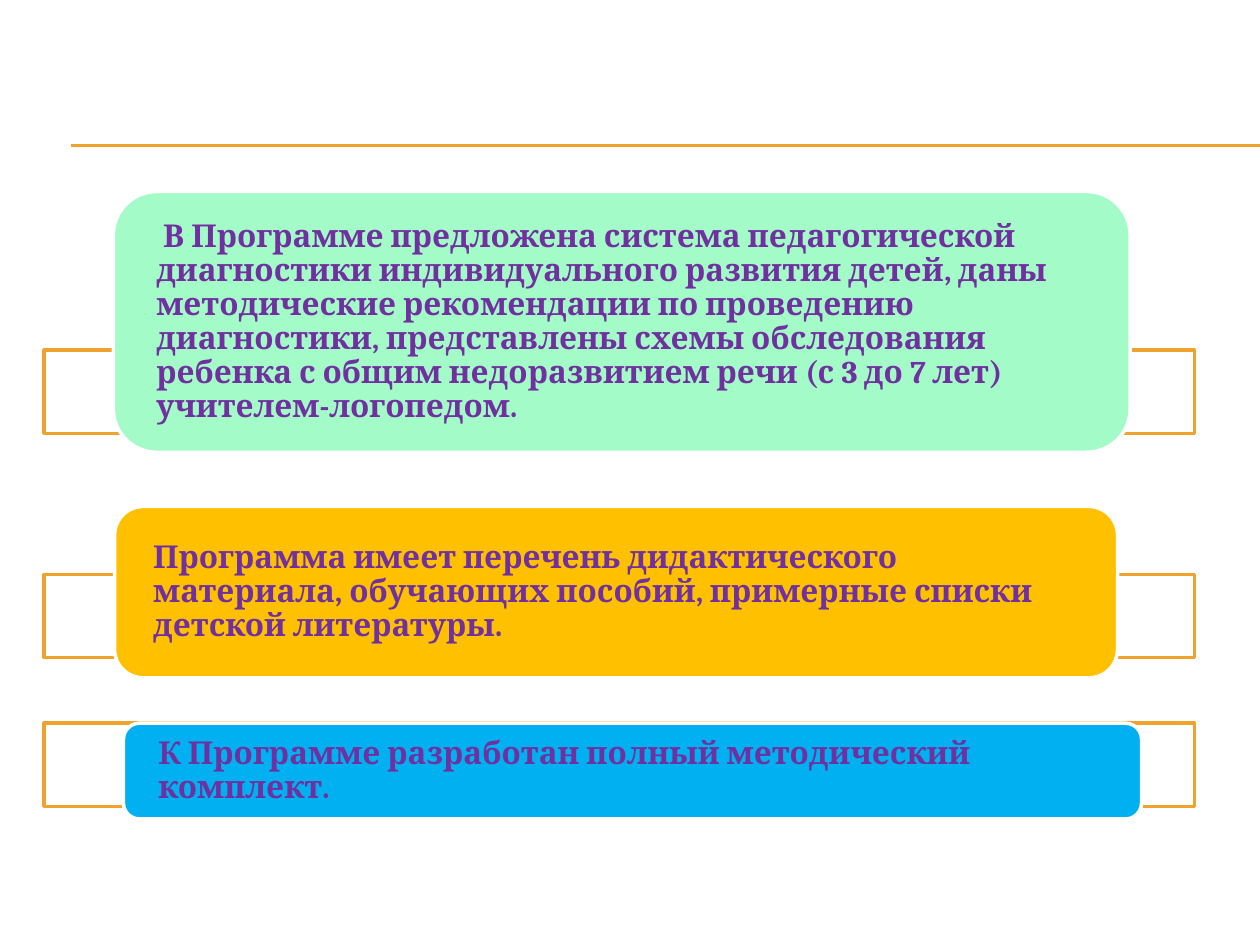
from lxml.etree import SubElement
from pptx import Presentation
from pptx.dml.color import RGBColor
from pptx.enum.shapes import MSO_CONNECTOR, MSO_SHAPE
from pptx.enum.text import MSO_ANCHOR, PP_ALIGN
from pptx.oxml.ns import qn
from pptx.util import Inches, Pt

ORANGE = RGBColor(0xF0, 0xA2, 0x2E)
WHITE = RGBColor(0xFF, 0xFF, 0xFF)
PURPLE = RGBColor(0x70, 0x30, 0xA0)
MINT = RGBColor(0xA3, 0xFB, 0xC7)
AMBER = RGBColor(0xFF, 0xC0, 0x00)
BLUE = RGBColor(0x00, 0xB0, 0xF0)

# text, fill, card box (left, top, width, height), top of the frame behind it
CARDS = [
    (" В Программе предложена система педагогической диагностики "
     "индивидуального развития детей, даны методические рекомендации по "
     "проведению диагностики, представлены схемы обследования ребенка с общим "
     "недоразвитием речи (с 3 до 7 лет) учителем-логопедом.",
     MINT, (0.9, 1.52, 8.07, 2.07), 2.78),
    ("Программа имеет перечень дидактического материала, обучающих пособий, "
     "примерные списки детской литературы.",
     AMBER, (0.91, 4.02, 7.96, 1.36), 4.56),
    ("К Программе разработан полный методический комплект.",
     BLUE, (0.98, 5.74, 8.08, 0.76), 5.74),
]
FRAME_LEFT, FRAME_WIDTH, FRAME_HEIGHT = 0.35, 9.13, 0.66
RULE_LEFT, RULE_RIGHT, RULE_TOPS = 0.56, 10, (1.15, 1.16)


def add_box(slide, kind, box, fill, line):
    sp = slide.shapes.add_shape(kind, *map(Inches, box))
    sp.shadow.inherit = False
    sp.fill.solid()
    sp.fill.fore_color.rgb = fill
    sp.line.color.rgb = line
    sp.line.width = Pt(2)
    return sp


def add_rule(slide, top):
    rule = slide.shapes.add_connector(
        MSO_CONNECTOR.STRAIGHT, Inches(RULE_LEFT), Inches(top),
        Inches(RULE_RIGHT), Inches(top))
    rule.line.color.rgb = ORANGE
    rule.line.width = Pt(0.75)
    SubElement(rule._element.spPr, qn("a:effectLst"))


def add_frame(slide, top):
    box = (FRAME_LEFT, top, FRAME_WIDTH, FRAME_HEIGHT)
    frame = add_box(slide, MSO_SHAPE.RECTANGLE, box, WHITE, ORANGE)
    color = frame._element.spPr.find(qn("a:solidFill")).find(qn("a:srgbClr"))
    SubElement(color, qn("a:alpha"), val="90000")


def add_card(slide, text, fill, box):
    card = add_box(slide, MSO_SHAPE.ROUNDED_RECTANGLE, box, fill, WHITE)
    tf = card.text_frame
    tf.word_wrap = True
    tf.vertical_anchor = MSO_ANCHOR.MIDDLE
    tf.margin_left = tf.margin_right = Inches(0.24)
    tf.margin_top = tf.margin_bottom = 0
    p = tf.paragraphs[0]
    p.text = text
    p.alignment = PP_ALIGN.LEFT
    p.line_spacing = 0.9
    font = p.runs[0].font
    font.name = "Cambria"
    font.size = Pt(18)
    font.bold = True
    font.color.rgb = PURPLE


prs = Presentation()
prs.slide_width, prs.slide_height = Inches(10), Inches(7.5)
slide = prs.slides.add_slide(prs.slide_layouts[6])

for top in RULE_TOPS:
    add_rule(slide, top)
for text, fill, box, frame_top in CARDS:
    add_frame(slide, frame_top)
    add_card(slide, text, fill, box)

prs.save("out.pptx")
